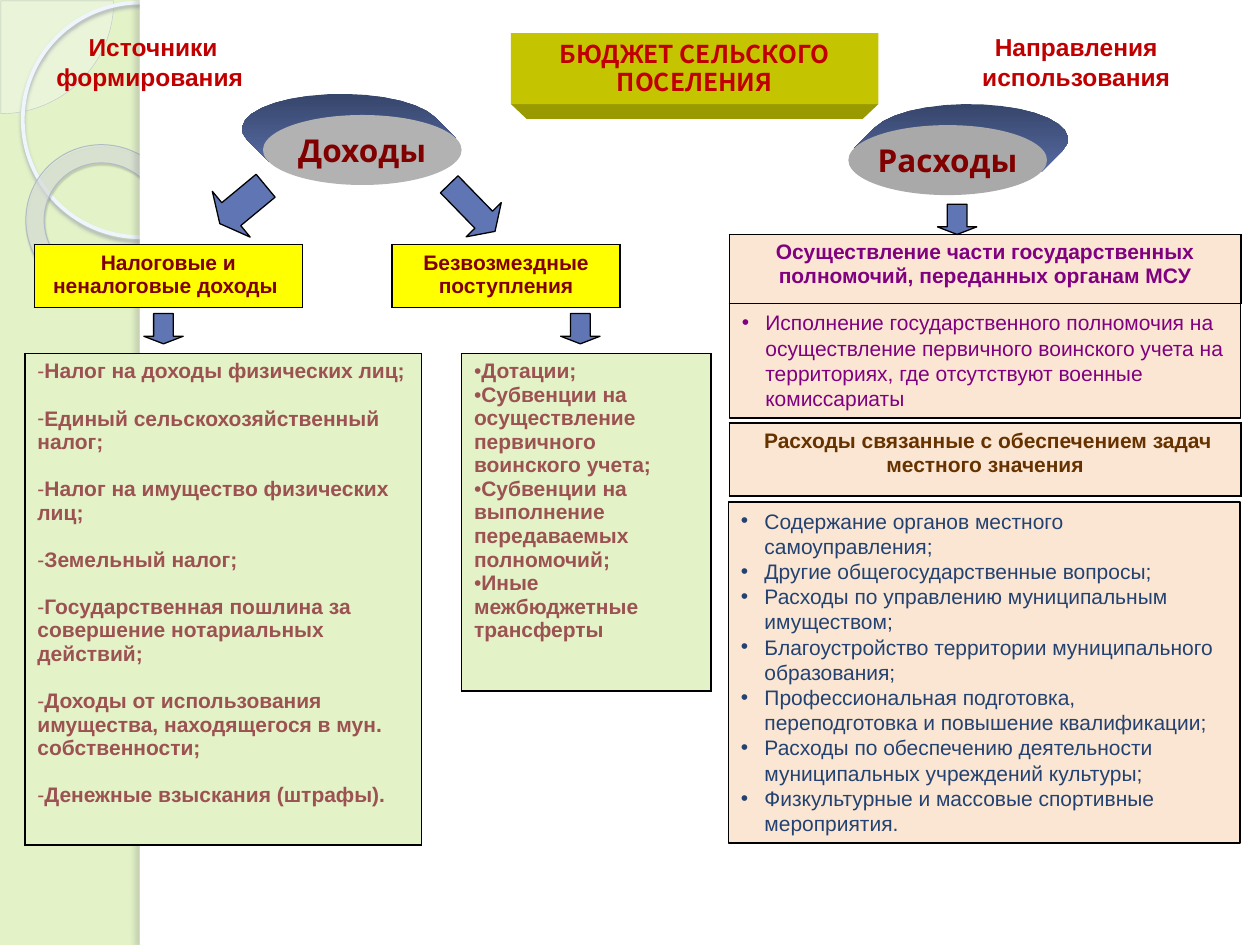
import math
from dataclasses import dataclass

import pptx
import pptx.dml.color
import pptx.enum.shapes
import pptx.enum.text
import pptx.oxml
import pptx.oxml.ns
import pptx.util

Pt = pptx.util.Pt
SHAPE = pptx.enum.shapes.MSO_SHAPE
ALIGN = pptx.enum.text.PP_ALIGN
ANCHOR = pptx.enum.text.MSO_ANCHOR
NS = pptx.oxml.ns.nsdecls("a")


@dataclass(frozen=True)
class Theme:
    """Colours, fonts and type sizes of the slide."""
    green: str = "E3F2C7"
    white: str = "FFFFFF"
    black: str = "000000"
    yellow: str = "FFFF00"
    peach: str = "FAE6D3"
    red: str = "C00000"
    maroon: str = "800000"
    rose: str = "9C5252"
    purple: str = "800080"
    brown: str = "663300"
    navy: str = "234271"
    arrow: str = "6076B4"
    olive: str = "C4C400"
    dark_olive: str = "999900"
    side: tuple = ("36456A", "566AA2")
    income: str = "B2B2B2"
    spending: str = "A9A9A9"
    font: str = "Arial"
    title_font: str = "Noto Sans CJK KR"
    oval_font: str = "Cabin"
    body: int = 12
    heading: int = 14
    oval: int = 18


T = Theme()

TAXES = [
    "Налог на доходы физических лиц;",
    "Единый сельскохозяйственный налог;",
    "Налог на имущество физических лиц;",
    "Земельный налог;",
    "Государственная пошлина за совершение нотариальных действий;",
    "Доходы от использования имущества, находящегося в мун. собственности;",
    "Денежные взыскания (штрафы).",
]
GRANTS = [
    "Дотации;",
    "Субвенции на осуществление первичного воинского учета;",
    "Субвенции на выполнение передаваемых полномочий;",
    "Иные межбюджетные трансферты",
]
DELEGATED = ["Исполнение государственного полномочия на осуществление первичного "
             "воинского учета на территориях, где отсутствуют военные комиссариаты"]
LOCAL = [
    "Содержание органов местного самоуправления;",
    "Другие общегосударственные вопросы;",
    "Расходы по управлению муниципальным имуществом;",
    "Благоустройство территории муниципального образования;",
    "Профессиональная подготовка, переподготовка и повышение квалификации;",
    "Расходы по обеспечению деятельности муниципальных учреждений культуры;",
    "Физкультурные и массовые спортивные мероприятия.",
]


def rgb(color):
    """Turn a hex string into a colour."""
    return pptx.dml.color.RGBColor.from_string(color)


def write(tf, lines, color, size=T.body, font=T.font, bold=True, align=ALIGN.CENTER,
          bullet=None, indent=0, spacing=1.0, after=0, wrap=True):
    """Fill a text frame with equally formatted paragraphs."""
    tf.word_wrap = wrap
    for i, line in enumerate(lines):
        p = tf.paragraphs[0] if i == 0 else tf.add_paragraph()
        p.text = line
        p.alignment, p.line_spacing = align, spacing
        p.space_before = Pt(0)
        p.space_after = Pt(after if i < len(lines) - 1 else 0)
        p.font.name, p.font.size, p.font.bold = font, Pt(size), bold
        p.font.color.rgb = rgb(color)
        if bullet:
            pPr = p._p.get_or_add_pPr()
            pPr.set("marL", str(Pt(indent)))
            pPr.set("indent", str(-Pt(indent)))
            for xml in (f'<a:buFont {NS} typeface="{font}"/>',
                        f'<a:buChar {NS} char="{bullet}"/>'):
                pPr.insert_element_before(pptx.oxml.parse_xml(xml),
                                          "a:tabLst", "a:defRPr", "a:extLst")


def paint(sp, fill=None, line=None, width=0.75, alpha=None):
    """Set fill, outline and opacity of a shape and drop its shadow."""
    sp.shadow.inherit = False
    if fill:
        sp.fill.solid()
        sp.fill.fore_color.rgb = rgb(fill)
        if alpha:
            color = sp.fill._xPr.find(".//" + pptx.oxml.ns.qn("a:srgbClr"))
            color.append(pptx.oxml.parse_xml(f'<a:alpha {NS} val="{alpha * 1000}"/>'))
    else:
        sp.fill.background()
    if line:
        sp.line.color.rgb = rgb(line)
        sp.line.width = Pt(width)
    else:
        sp.line.fill.background()


def add_shape(s, kind, box, fill=None, line=None, width=0.75, alpha=None, rotation=0, adj=()):
    """Add a preset shape."""
    sp = s.shapes.add_shape(kind, *map(Pt, box))
    paint(sp, fill, line, width, alpha)
    sp.rotation = rotation
    for i, value in enumerate(adj):
        sp.adjustments[i] = value
    return sp


def cast_shadow(sp, color, alpha, blur, distance, angle):
    """Give a shape an outer shadow."""
    effects = sp._element.spPr.find(pptx.oxml.ns.qn("a:effectLst"))
    effects.append(pptx.oxml.parse_xml(
        f'<a:outerShdw {NS} blurRad="{Pt(blur)}" dist="{Pt(distance)}" dir="{angle * 60000}">'
        f'<a:srgbClr val="{color}"><a:alpha val="{alpha * 1000}"/></a:srgbClr></a:outerShdw>'))


def add_background(s):
    """Draw the green side band with its rings and the white panel."""
    s.background.fill.solid()
    s.background.fill.fore_color.rgb = rgb(T.green)
    add_shape(s, SHAPE.PIE, (-64, -64, 129, 129), "F9FBFD", "BFC7D1", 0.25, 33, adj=(0, 54))
    ring = add_shape(s, SHAPE.OVAL, (13, 1.5, 134, 134), None, "EEF5FD", 2.15)
    cast_shadow(ring, "A7ACB3", 85, 2, 2, 90)
    donut = add_shape(s, SHAPE.DONUT, (14.5, 83, 88.5, 87), "E6ECE6", "B1BAC5", 0.58, 60,
                      38.6, (0.12,))
    cast_shadow(donut, "52555A", 35, 1, 1.2, 75)
    edge = add_shape(s, SHAPE.RECTANGLE, (80, 0, 6, 540), T.white)
    cast_shadow(edge, "717477", 25, 3, 3, 180)
    add_shape(s, SHAPE.RECTANGLE, (80, 0, 640, 540), T.white)


def add_title(s, text, box):
    """Place the title on a block with a bevelled lower edge."""
    x, y, w, h = box
    bottom, depth, inset = y + h, 8.5, 9
    edge = s.shapes.build_freeform(Pt(x), Pt(bottom))
    edge.add_line_segments([(Pt(x + w), Pt(bottom)), (Pt(x + w - inset), Pt(bottom + depth)),
                            (Pt(x + inset), Pt(bottom + depth))])
    paint(edge.convert_to_shape(), T.dark_olive)
    title = s.shapes.title
    title.left, title.top, title.width, title.height = map(Pt, box)
    title.fill.solid()
    title.fill.fore_color.rgb = rgb(T.olive)
    tf = title.text_frame
    tf.vertical_anchor = ANCHOR.MIDDLE
    tf.auto_size = pptx.enum.text.MSO_AUTO_SIZE.NONE
    write(tf, [text], T.red, T.heading, T.title_font, spacing=0.95)
    s.shapes.element.append(title.element)


def add_oval(s, text, box, fill, dx, dy=-12):
    """Add an oval with a solid side reaching back by dx, dy."""
    x, y, w, h = box
    a, b = w / 2, h / 2
    steps = 16
    start = math.atan2(dy / b, dx / a) - math.pi / 2
    arc = [(x + a + a * math.cos(t), y + b + b * math.sin(t))
           for t in (start + math.pi * i / steps for i in range(steps + 1))]
    side = s.shapes.build_freeform(*map(Pt, arc[0]))
    side.add_line_segments([(Pt(px + dx), Pt(py + dy)) for px, py in arc]
                           + [tuple(map(Pt, arc[-1]))])
    side = side.convert_to_shape()
    paint(side)
    side.fill.gradient()
    side.fill.gradient_angle = 270
    for stop, color in zip(side.fill.gradient_stops, T.side):
        stop.color.rgb = rgb(color)
    front = add_shape(s, SHAPE.OVAL, box, fill)
    front.text_frame.vertical_anchor = ANCHOR.MIDDLE
    write(front.text_frame, [text], T.maroon, T.oval, T.oval_font, wrap=False)


def add_label(s, text, box):
    """Add a red heading without a frame."""
    tf = s.shapes.add_textbox(*map(Pt, box)).text_frame
    write(tf, [text], T.red, T.heading)


def add_cell(s, lines, box, fill, color, **style):
    """Add a bordered one-cell table."""
    table = s.shapes.add_table(1, 1, *map(Pt, box)).table
    table.first_row = table.horz_banding = False
    cell = table.cell(0, 0)
    for side in "LRTB":
        cell._tc.get_or_add_tcPr().append(pptx.oxml.parse_xml(
            f'<a:ln{side} {NS} w="{Pt(1)}"><a:solidFill><a:srgbClr val="{T.black}"/>'
            f'</a:solidFill></a:ln{side}>'))
    cell.fill.solid()
    cell.fill.fore_color.rgb = rgb(fill)
    write(cell.text_frame, lines, color, **style)


def add_list(s, lines, box, color):
    """Add a peach box with a bulleted list."""
    sp = add_shape(s, SHAPE.RECTANGLE, box, T.peach, T.black)
    sp.text_frame.vertical_anchor = ANCHOR.TOP
    write(sp.text_frame, lines, color, bold=False, align=ALIGN.LEFT, bullet="•", indent=13.5)


def add_arrow(s, box, rotation=0, head=0.25):
    """Add a block arrow that points down before rotation."""
    add_shape(s, SHAPE.DOWN_ARROW, box, T.arrow, T.black, rotation=rotation, adj=(0.5, head))


def main():
    """Build and save the slide."""
    prs = pptx.Presentation()
    prs.slide_width, prs.slide_height = Pt(720), Pt(540)
    s = prs.slides.add_slide(prs.slide_layouts[5])
    add_background(s)
    add_title(s, "БЮДЖЕТ СЕЛЬСКОГО ПОСЕЛЕНИЯ", (292, 19, 210, 40.5))
    add_label(s, "Источники формирования ", (14.5, 15, 146, 41))
    add_label(s, "Направления использования", (535.5, 15, 159, 41))
    add_oval(s, "Доходы", (150.3, 65.7, 113.5, 40), T.income, -12)
    add_oval(s, "Расходы", (484.8, 71.5, 113.5, 40), T.spending, 12)

    add_cell(s, ["Налоговые и неналоговые доходы "], (19.6, 139.8, 153.3, 36), T.yellow, T.maroon)
    add_cell(s, ["Безвозмездные поступления"], (224, 139.8, 130.4, 36), T.yellow, T.maroon)
    add_cell(s, TAXES, (14.2, 202, 226.8, 281), T.green, T.rose, align=ALIGN.LEFT,
             bullet="-", after=13.5)
    add_cell(s, GRANTS, (263.7, 202, 142.5, 193), T.green, T.rose, align=ALIGN.LEFT, bullet="•")

    add_cell(s, ["Осуществление части государственных полномочий, переданных органам МСУ"],
             (416.8, 134, 292.3, 39.5), T.peach, T.purple)
    add_list(s, DELEGATED, (416.8, 173.5, 292.3, 65.4), T.purple)
    add_cell(s, [" Расходы связанные с обеспечением задач местного значения"],
             (416.8, 241.8, 292.3, 41.5), T.peach, T.brown)
    add_list(s, LOCAL, (416.3, 286.8, 292.3, 195), T.navy)

    add_arrow(s, (121.7, 100, 34, 34), 50.4)
    add_arrow(s, (255.8, 100, 28, 37.5), 315.8, 0.33)
    for x, y in ((82.2, 179.2), (320.4, 179.2), (535.7, 116.7)):
        add_arrow(s, (x, y, 22.5, 17.3))
    prs.save("out.pptx")


if __name__ == "__main__":
    main()
